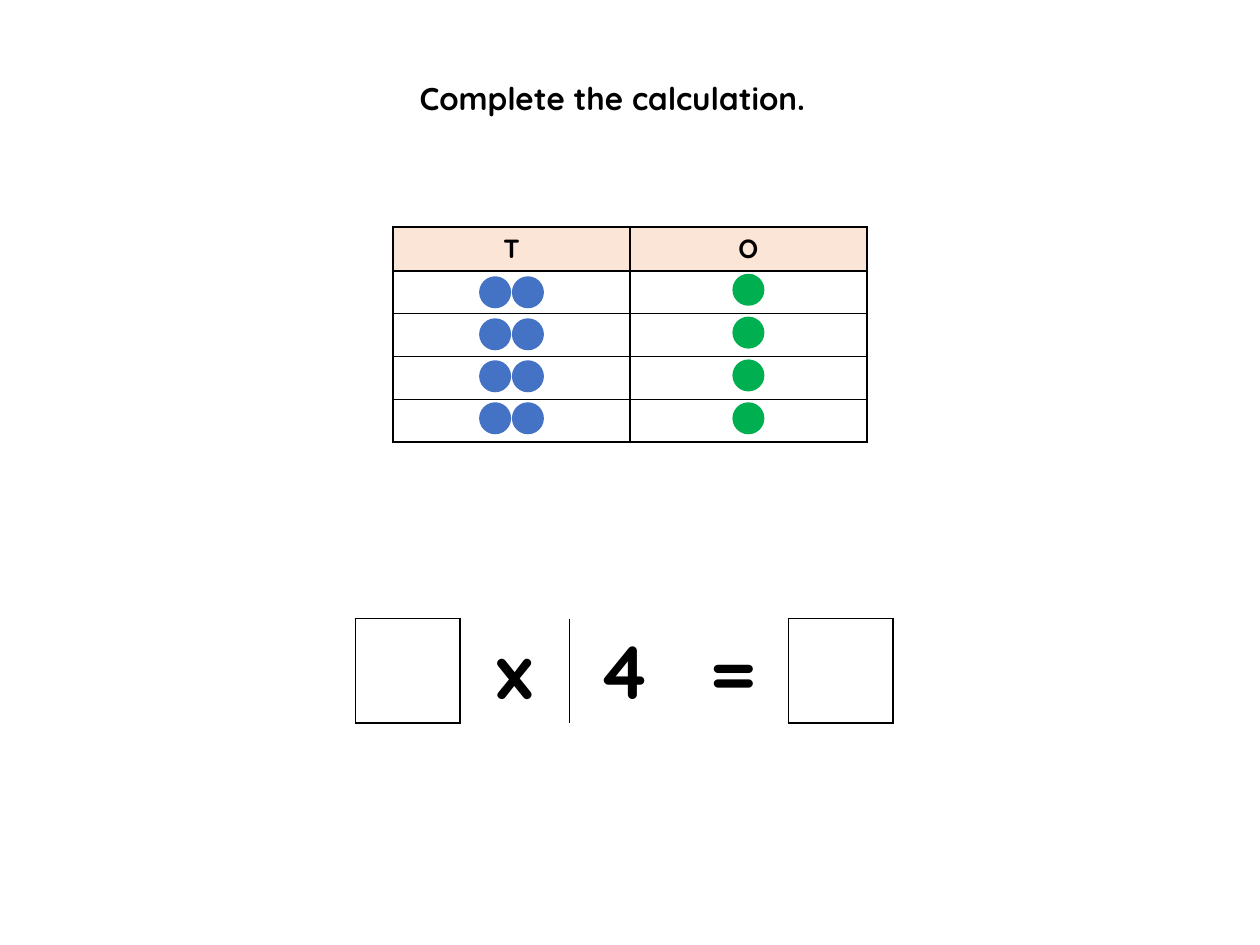
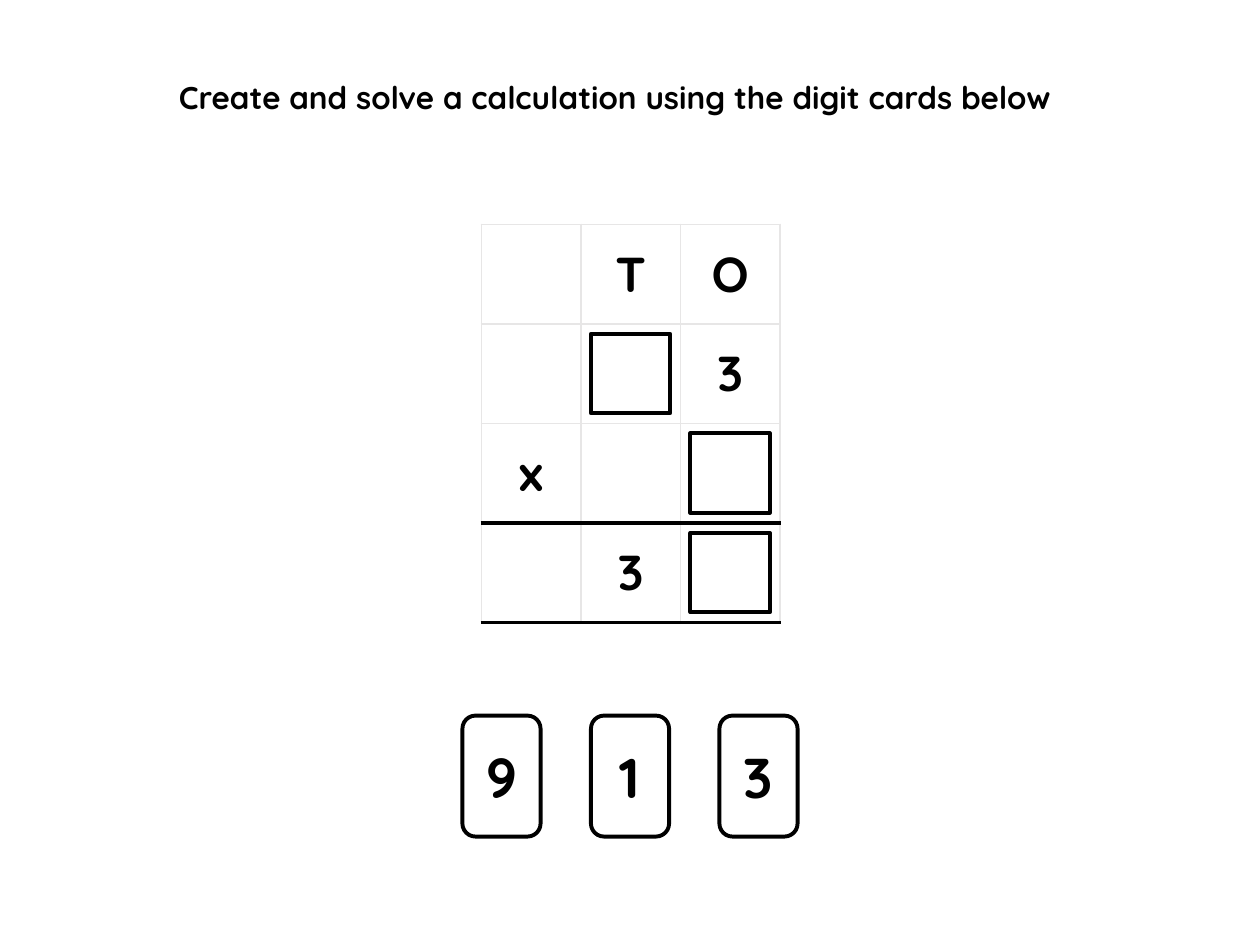
from dataclasses import dataclass

from lxml.etree import SubElement
from pptx import Presentation
from pptx.dml.color import RGBColor
from pptx.enum.shapes import MSO_SHAPE
from pptx.enum.text import MSO_ANCHOR, MSO_AUTO_SIZE, PP_ALIGN
from pptx.oxml.ns import qn
from pptx.util import Inches, Pt


@dataclass(frozen=True)
class Theme:
    font: str = "Quicksand"
    ink: str = "000000"
    paper: str = "FFFFFF"
    header: str = "FBE5D6"
    grid: str = "E7E6E6"
    tens: str = "4472C4"
    ones: str = "00B050"
    title_size: int = 18
    header_size: int = 15
    equation_size: int = 43
    digit_size: int = 28
    card_size: int = 32
    empty_size: int = 8
    thin: float = 1
    thick: float = 2.25


THEME = Theme()
TITLE_HEIGHT = 0.4
THIN_INK = (THEME.ink, THEME.thin)
THICK_INK = (THEME.ink, THEME.thick)
THIN_GRID = (THEME.grid, THEME.thin)

# Slide 1: place value chart and equation
CHART_TITLE = ("Complete the calculation.", 3.23, 0.58, 3.46)
CHART_AT = (3.12, 1.8)
CHART_COLUMNS = [1.88] * 2
CHART_ROWS = [0.35] + [0.34] * 4
CHART_CELLS = [["T", "O"]] + [["", ""]] * 4
COUNTER_SIZE = 0.24
COUNTER_ROWS = 4
COUNTERS = [  # colour, lefts, first top, last top
    (THEME.ones, [5.82], 2.18, 3.2),
    (THEME.tens, [3.81, 4.07], 2.2, 3.2),
]
EQUATION_AT = (2.82, 4.91)
EQUATION_COLUMNS = [0.83, 0.87, 0.87, 0.87, 0.83]
EQUATION_ROWS = [0.83]
EQUATION_CELLS = [["", "x", "4", "=", ""]]
EQUATION_SIDES = ["LRTB", "LR", "L", "R", "LRTB"]

# Slide 2: column multiplication and digit cards
GRID_TITLE = ("Create and solve a calculation using the digit cards below", 1.32, 0.57, 7.82)
GRID_AT = (3.82, 1.78)
GRID_STEP = 0.79
GRID_CELLS = [["", "T", "O"], ["", "", "3"], ["x", "", ""], ["", "3", ""]]
ANSWER_ROWS = (2, 3)  # rows ruled off with a thick line below
ANSWER_BOXES = [(2, 2), (1, 1), (2, 3)]  # column, row
ANSWER_SIZE = 0.63
CARDS = ["9", "1", "3"]
CARD_AT = (3.67, 5.68)
CARD_SIZE = (0.62, 0.96)
CARD_STEP = 1.02


def colour(value):
    return RGBColor.from_string(value)


def write(frame, text, size, alignment=PP_ALIGN.CENTER):
    frame.text = text
    para = frame.paragraphs[0]
    para.alignment = alignment
    for span in para.runs:
        span.font.name = THEME.font
        span.font.size = Pt(size)
        span.font.bold = True
        span.font.color.rgb = colour(THEME.ink)


def add_page(deck, title):
    text, left, top, width = title
    page = deck.slides.add_slide(deck.slide_layouts[5])
    box = page.shapes.title
    box.left, box.top = Inches(left), Inches(top)
    box.width, box.height = Inches(width), Inches(TITLE_HEIGHT)
    frame = box.text_frame
    frame.word_wrap = True
    frame.auto_size = MSO_AUTO_SIZE.NONE
    frame.vertical_anchor = MSO_ANCHOR.TOP
    write(frame, text, THEME.title_size, PP_ALIGN.LEFT)
    return page


def add_box(shapes, kind, left, top, width, height, fill, line):
    box = shapes.add_shape(kind, Inches(left), Inches(top), Inches(width), Inches(height))
    box.shadow.inherit = False
    box.fill.solid()
    box.fill.fore_color.rgb = colour(fill)
    box.line.color.rgb = colour(line[0])
    box.line.width = Pt(line[1])
    return box


def set_borders(cell, borders):
    """Draw the sides named in borders, and hide the others."""
    properties = cell._tc.get_or_add_tcPr()
    for index, side in enumerate("LRTB"):
        tag = qn(f"a:ln{side}")
        if side in borders:
            value, width = borders[side]
            edge = properties.makeelement(tag, {"w": str(Pt(width))})
            fill = SubElement(edge, qn("a:solidFill"))
            SubElement(fill, qn("a:srgbClr"), val=value)
        else:
            edge = properties.makeelement(tag, {"w": "0"})
            SubElement(edge, qn("a:noFill"))
        properties.insert(index, edge)


def add_table(page, at, columns, rows, cells, size, style):
    """Add a table; style(row, column) gives a cell's fill and its borders."""
    left, top = at
    table = page.shapes.add_table(
        len(rows), len(columns), Inches(left), Inches(top), Inches(sum(columns)), Inches(sum(rows))
    ).table
    table.first_row = table.horz_banding = False
    for column, width in zip(table.columns, columns):
        column.width = Inches(width)
    for row, height in zip(table.rows, rows):
        row.height = Inches(height)
    for row, texts in enumerate(cells):
        for column, text in enumerate(texts):
            cell = table.cell(row, column)
            cell.margin_left = cell.margin_right = 0
            cell.margin_top = cell.margin_bottom = 0
            cell.vertical_anchor = MSO_ANCHOR.MIDDLE
            write(cell.text_frame, text, size)
            if not text:  # small type keeps an empty row from growing
                para = cell.text_frame.paragraphs[0]
                SubElement(para._p, qn("a:endParaRPr"), sz=str(THEME.empty_size * 100))
            fill, borders = style(row, column)
            cell.fill.solid()
            cell.fill.fore_color.rgb = colour(fill)
            set_borders(cell, borders)


def chart_style(row, column):
    return THEME.paper if row else THEME.header, dict.fromkeys("LRTB", THIN_INK)


def equation_style(row, column):
    return THEME.paper, dict.fromkeys(EQUATION_SIDES[column], THIN_INK)


def grid_style(row, column):
    borders = dict.fromkeys("LRTB", THIN_GRID)
    if row in ANSWER_ROWS:
        borders["B"] = THICK_INK
    if row - 1 in ANSWER_ROWS:
        borders["T"] = THICK_INK
    return THEME.paper, borders


def add_counters(page):
    for value, lefts, first, last in COUNTERS:
        group = page.shapes.add_group_shape()
        step = (last - first) / (COUNTER_ROWS - 1)
        for left in lefts:
            for row in range(COUNTER_ROWS):
                add_box(group.shapes, MSO_SHAPE.OVAL, left, first + row * step,
                        COUNTER_SIZE, COUNTER_SIZE, value, (value, THEME.thin))


def add_answer_boxes(page):
    inset = (GRID_STEP - ANSWER_SIZE) / 2
    for column, row in ANSWER_BOXES:
        add_box(page.shapes, MSO_SHAPE.RECTANGLE,
                GRID_AT[0] + column * GRID_STEP + inset, GRID_AT[1] + row * GRID_STEP + inset,
                ANSWER_SIZE, ANSWER_SIZE, THEME.paper, THICK_INK)


def add_cards(page):
    group = page.shapes.add_group_shape()
    left, top = CARD_AT
    for index, digit in enumerate(CARDS):
        card = add_box(group.shapes, MSO_SHAPE.ROUNDED_RECTANGLE, left + index * CARD_STEP, top,
                       *CARD_SIZE, THEME.paper, THICK_INK)
        card.text_frame.vertical_anchor = MSO_ANCHOR.MIDDLE
        write(card.text_frame, digit, THEME.card_size)


def main():
    deck = Presentation()
    deck.slide_width, deck.slide_height = Inches(10), Inches(7.5)

    page = add_page(deck, CHART_TITLE)
    add_table(page, CHART_AT, CHART_COLUMNS, CHART_ROWS, CHART_CELLS,
              THEME.header_size, chart_style)
    add_counters(page)
    add_table(page, EQUATION_AT, EQUATION_COLUMNS, EQUATION_ROWS, EQUATION_CELLS,
              THEME.equation_size, equation_style)

    page = add_page(deck, GRID_TITLE)
    add_cards(page)
    add_table(page, GRID_AT, [GRID_STEP] * 3, [GRID_STEP] * 4, GRID_CELLS,
              THEME.digit_size, grid_style)
    add_answer_boxes(page)

    deck.save("out.pptx")


if __name__ == "__main__":
    main()
